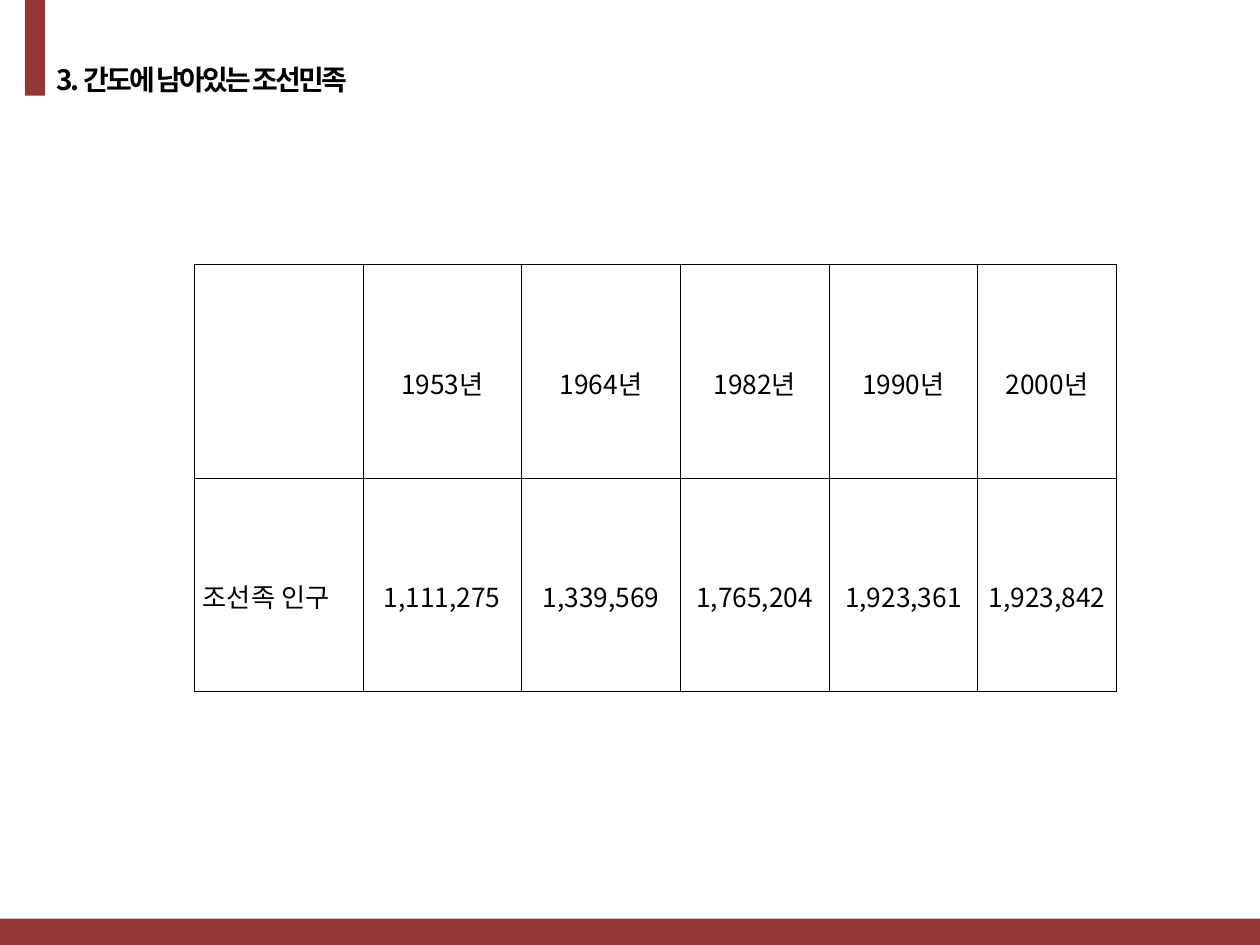
from dataclasses import dataclass

from lxml import etree
from pptx import Presentation
from pptx.dml.color import RGBColor
from pptx.enum.shapes import MSO_SHAPE
from pptx.enum.text import MSO_ANCHOR, PP_ALIGN
from pptx.oxml.ns import qn
from pptx.util import Inches, Pt

RECT = MSO_SHAPE.RECTANGLE
MIDDLE = MSO_ANCHOR.MIDDLE
LEFT, CENTER, JUSTIFY = PP_ALIGN.LEFT, PP_ALIGN.CENTER, PP_ALIGN.JUSTIFY
WIDTH, HEIGHT = Inches(10), Inches(7.5)


@dataclass(frozen=True)
class Theme:
    font: str = "Noto Sans CJK KR"
    ink: RGBColor = RGBColor(0, 0, 0)
    accent: RGBColor = RGBColor(0x95, 0x37, 0x35)
    title: float = 16
    body: float = 15
    rule: float = 0.28


@dataclass(frozen=True)
class Box:
    """A rectangle in percent of the slide's width and height."""
    left: float
    top: float
    width: float
    height: float

    def place(self) -> tuple[int, int, int, int]:
        return (int(WIDTH * self.left / 100), int(HEIGHT * self.top / 100),
                int(WIDTH * self.width / 100), int(HEIGHT * self.height / 100))


THEME = Theme()
TITLE = Box(3.5, 4.53, 94.5, 6)
BARS = (Box(2, 0, 1.6, 10.13), Box(0, 97.2, 100, 2.8))
TABLE = Box(15.4, 28, 73.2, 45.2)
SHARES = (13.4, 12.6, 12.6, 11.8, 11.8, 11)
ROWS = (
    ("", "1953년", "1964년", "1982년", "1990년", "2000년"),
    ("조선족 인구", "1,111,275", "1,339,569", "1,765,204", "1,923,361", "1,923,842"),
)


def write(frame, text: str, size: float, align, space: float, bold: bool = False):
    para = frame.paragraphs[0]
    para.alignment = align
    para.line_spacing = space
    run = para.add_run()
    run.text = text
    font = run.font
    font.name, font.size, font.bold = THEME.font, Pt(size), bold
    font.color.rgb = THEME.ink
    props = run._r.get_or_add_rPr()
    etree.SubElement(props, qn("a:ea"), typeface=THEME.font)
    return para, props


def add_title(slide) -> None:
    title = slide.shapes.title
    title.left, title.top, title.width, title.height = TITLE.place()
    frame = title.text_frame
    frame.word_wrap = True
    frame.vertical_anchor = MIDDLE
    para, props = write(frame, "3. 간도에 남아있는 조선민족", THEME.title, LEFT, 1.5, True)
    props.set("spc", "-150")
    indent = Inches(0.38)
    layout = para._p.get_or_add_pPr()
    layout.set("marL", str(indent))
    layout.set("indent", str(-indent))


def add_bar(slide, box: Box) -> None:
    bar = slide.shapes.add_shape(RECT, *box.place())
    bar.shadow.inherit = False
    bar.fill.solid()
    bar.fill.fore_color.rgb = THEME.accent
    bar.line.fill.background()


def add_rules(cell) -> None:
    """Draw thin lines on all four sides of a cell."""
    props = cell._tc.get_or_add_tcPr()
    for slot, side in enumerate(("lnL", "lnR", "lnT", "lnB")):
        line = etree.Element(qn(f"a:{side}"), w=str(Pt(THEME.rule)))
        fill = etree.SubElement(line, qn("a:solidFill"))
        etree.SubElement(fill, qn("a:srgbClr"), val=str(THEME.ink))
        props.insert(slot, line)


def add_table(slide) -> None:
    grid = slide.shapes.add_table(len(ROWS), len(SHARES), *TABLE.place()).table
    grid.first_row = grid.horz_banding = False
    for column, share in zip(grid.columns, SHARES):
        column.width = int(WIDTH * share / 100)
    for r, row in enumerate(ROWS):
        for c, text in enumerate(row):
            cell = grid.cell(r, c)
            cell.fill.background()
            add_rules(cell)
            cell.vertical_anchor = MIDDLE
            cell.margin_left = cell.margin_right = Inches(0.07)
            cell.margin_top = cell.margin_bottom = Inches(0.02)
            if text:
                write(cell.text_frame, text, THEME.body, CENTER if c else JUSTIFY, 1.6)


def main() -> None:
    deck = Presentation()
    deck.slide_width, deck.slide_height = WIDTH, HEIGHT
    slide = deck.slides.add_slide(deck.slide_layouts[5])
    add_title(slide)
    for box in BARS:
        add_bar(slide, box)
    add_table(slide)
    deck.save("out.pptx")


if __name__ == "__main__":
    main()
